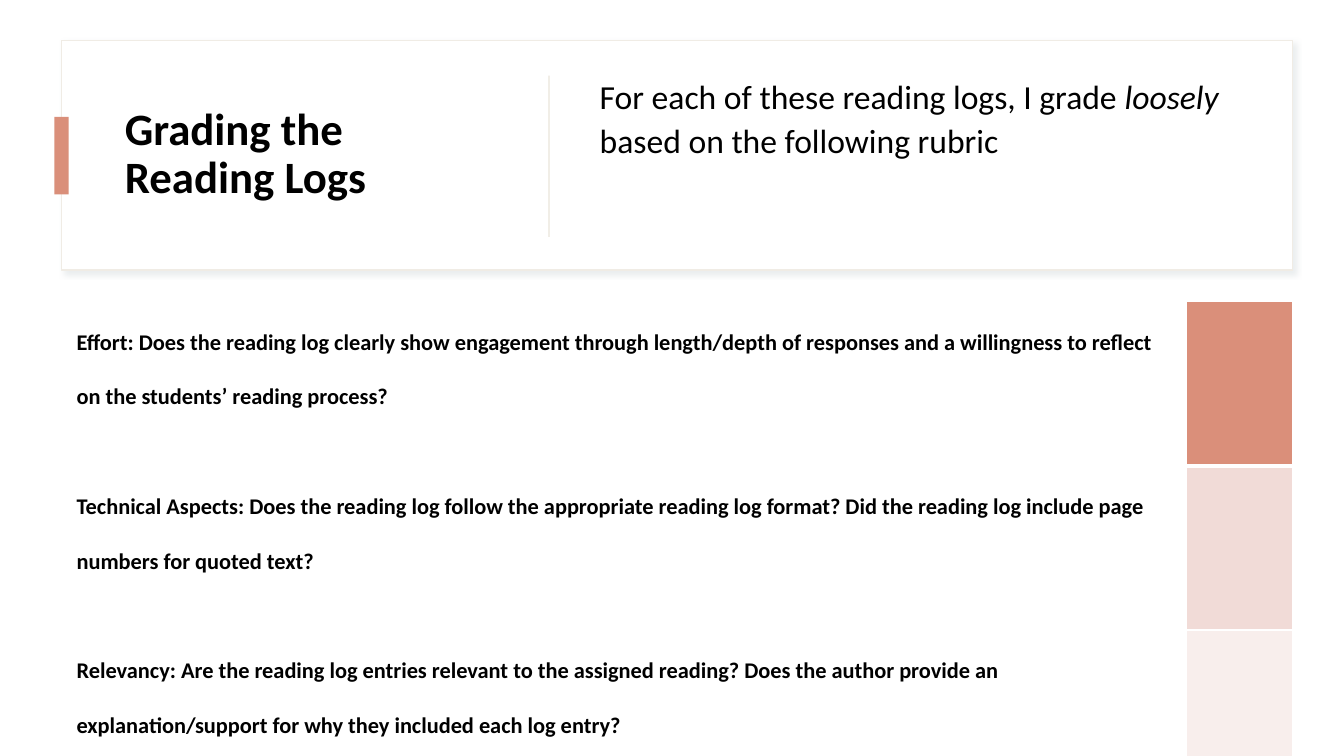
from pptx import Presentation, util as u
from pptx.dml.color import RGBColor
from pptx.enum import shapes, text
from pptx.oxml import parse_xml
from pptx.oxml.ns import nsdecls

theme = {
    "font": "Calibri", "title": 32, "lead": 24, "item": 16,
    "ink": "000000", "paper": "FFFFFF", "frame": "F0ECE5",
    "rule": "DACFBD", "accent": "DA8F7A", "shade": "BCC7CA",
    "tints": ("DA8F7A", "F1DBD7", "F8EEEC"),
}
unit = u.Inches(0.1)  # one grid step

deck = Presentation()
deck.slide_width, deck.slide_height = u.Inches(13.33), u.Inches(7.5)
slide = deck.slides.add_slide(deck.slide_layouts[6])


def block(x, y, w, h, fill):
    """Draw a plain rectangle placed in grid steps."""
    box = slide.shapes.add_shape(
        shapes.MSO_SHAPE.RECTANGLE, *(int(n * unit) for n in (x, y, w, h)))
    box.shadow.inherit = False
    box.fill.solid()
    box.fill.fore_color.rgb = RGBColor.from_string(theme[fill])
    box.line.fill.background()
    return box


def style(par, size, space, bold=False):
    """Format a paragraph and its runs."""
    par.line_spacing = space
    for run in par.runs:
        run.font.name = theme["font"]
        run.font.size = u.Pt(theme[size])
        run.font.bold = bold
        run.font.color.rgb = RGBColor.from_string(theme["ink"])


# Header panel
panel = block(6.1, 4, 122.1, 22.8, "paper")
panel.line.color.rgb = RGBColor.from_string(theme["frame"])
panel.line.width = u.Pt(1)
panel._element.spPr.find(".//{*}effectLst").append(parse_xml(
    f'<a:outerShdw {nsdecls("a")} blurRad="{u.Pt(4)}" dist="{u.Pt(3)}" '
    f'dir="2700000"><a:srgbClr val="{theme["shade"]}">'
    '<a:alpha val="30000"/></a:srgbClr></a:outerShdw>'))
block(5.4, 11.6, 1.4, 7.7, "accent")
block(54.4, 7.5, 0.1, 16, "rule")

# Heading and lead
heads = (
    (11.4, 6.4, 38.7, "title", 0.9, True, text.MSO_ANCHOR.MIDDLE,
     ("Grading the Reading Logs",)),
    (58.5, 6.6, 65.6, "lead", 1.1, False, text.MSO_ANCHOR.TOP,
     ("For each of these reading logs, I grade ", "loosely",
      " based on the following rubric")),
)
for x, y, w, size, space, bold, anchor, parts in heads:
    box = slide.shapes.add_textbox(
        *(int(n * unit) for n in (x, y, w, 18)))
    frame = box.text_frame
    frame.word_wrap = True
    frame.vertical_anchor = anchor
    par = frame.paragraphs[0]
    for part in parts:
        run = par.add_run()
        run.text = part
        run.font.italic = part == "loosely"
    style(par, size, space, bold)

# Rubric
rubric = (
    "Effort: Does the reading log clearly show engagement through length/depth "
    "of responses and a willingness to reflect on the students’ reading process?",
    "Technical Aspects: Does the reading log follow the appropriate reading log "
    "format? Did the reading log include page numbers for quoted text?",
    "Relevancy: Are the reading log entries relevant to the assigned reading? "
    "Does the author provide an explanation/support for why they included each "
    "log entry?",
)
cols, rows = (110.9, 10.5), (16.3, 16.3, 12.7)
grid = slide.shapes.add_table(
    len(rows), len(cols), int(6.8 * unit), int(29.9 * unit),
    int(sum(cols) * unit), int(sum(rows) * unit)).table
grid.first_row = grid.horz_banding = False
for col, wide in zip(grid.columns, cols):
    col.width = int(wide * unit)

for i, (row, high, item, tint) in enumerate(
        zip(grid.rows, rows, rubric, theme["tints"])):
    row.height = int(high * unit)
    row.cells[0].text_frame.text = item
    style(row.cells[0].text_frame.paragraphs[0], "item", 2, True)
    for cell, fill in zip(row.cells, (theme["paper"], tint)):
        cell.margin_left = cell.margin_right = u.Inches(0.08)
        cell.margin_top = cell.margin_bottom = 0
        edges = {"L": 1, "R": 1, "T": 3 if i == 1 else 1,
                 "B": 3 if i == 0 else 1}
        for side, width in edges.items():
            cell._tc.get_or_add_tcPr().append(parse_xml(
                f'<a:ln{side} {nsdecls("a")} w="{u.Pt(width)}"><a:solidFill>'
                f'<a:srgbClr val="{theme["paper"]}"/></a:solidFill>'
                f'</a:ln{side}>'))
        cell.fill.solid()
        cell.fill.fore_color.rgb = RGBColor.from_string(fill)

deck.save("out.pptx")
